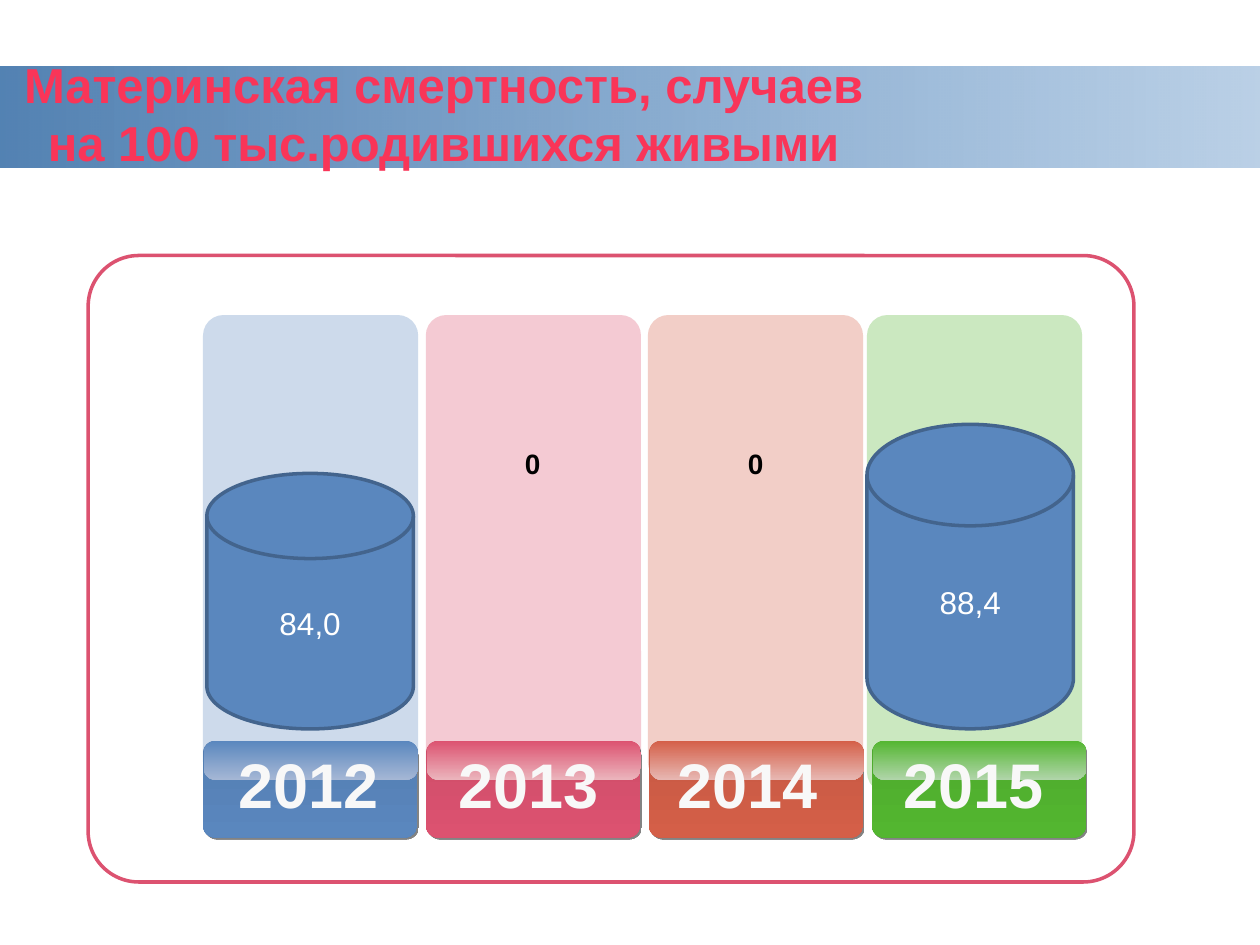
from lxml import etree
from pptx import Presentation
from pptx.dml.color import RGBColor
from pptx.enum import shapes, text
from pptx.oxml import ns
from pptx.util import Pt

KIND = shapes.MSO_SHAPE
FONT = "Arial"
BLUE = "5A87BE"
# year, value, bar colour, tab top colour, gloss end colour,
# bar left, bar height, year label width
YEARS = [
    ("2012", "84,0", BLUE, "547EB2", "A5B7D5", 116, 267, 119),
    ("2013", "0", "DC5270", "CE4D69", "EBB4BC", 243.3, 267, 115),
    ("2014", "0", "D45F48", "C65943", "E7B7B2", 370.2, 267, 111),
    ("2015", "88,4", "53B630", "4EAA2D", "B0D5A9", 495.4, 273, 114.5),
]
# value: offset from the bar's left, height
DISKS = {"84,0": (2.2, 146), "88,4": (0, 174)}


def rgb(code):
    return RGBColor.from_string(code)


def sub(node, tag, **attrs):
    return etree.SubElement(node, ns.qn(tag), **attrs)


def fade(shape, *alphas):
    """Set the opacity, in percent, of each fill colour in turn."""
    for clr, alpha in zip(shape._element.spPr.iter(ns.qn("a:srgbClr")), alphas):
        sub(clr, "a:alpha", val=str(alpha * 1000))


def cast(node, dist, alpha):
    shade = sub(node, "a:outerShdw", blurRad="0", dist=str(Pt(dist)),
                dir="2700000", algn="ctr", rotWithShape="0")
    clr = sub(shade, "a:srgbClr", val="080808")
    sub(clr, "a:alpha", val=str(alpha * 1000))


def block(host, kind, box, fill, line=None, adj=None):
    shape = host.shapes.add_shape(kind, *map(Pt, box))
    shape.shadow.inherit = False
    if adj:
        shape.adjustments[0] = adj
    shape.fill.solid()
    shape.fill.fore_color.rgb = rgb(fill)
    if line:
        shape.line.color.rgb = rgb(line)
        shape.line.width = Pt(2)
    else:
        shape.line.fill.background()
    return shape


def blend(shape, first, last, angle):
    shape.fill.gradient()
    shape.fill.gradient_angle = angle
    for stop, code in zip(shape.fill.gradient_stops, (first, last)):
        stop.color.rgb = rgb(code)


def write(shape, lines, size, color, bold=True):
    frame = shape.text_frame
    frame.word_wrap = True
    frame.vertical_anchor = text.MSO_ANCHOR.MIDDLE
    para = frame.paragraphs[0]
    para.alignment = text.PP_ALIGN.CENTER
    for i, line in enumerate(lines):
        if i:
            para.add_line_break()
        run = para.add_run()
        run.text = line
        run.font.size = Pt(size)
        run.font.bold = bold
        run.font.color.rgb = rgb(color)
        run.font.name = FONT
    return run


def label(slide, box, words, size, color):
    return write(slide.shapes.add_textbox(*map(Pt, box)), [words], size, color)


def header(slide, x, y, w, h):
    band = block(slide, KIND.RECTANGLE, (x, y, w, h), BLUE)
    blend(band, "00478F", "0052A4", 0)
    fade(band, 68, 27)
    slide.shapes._spTree.insert(2, band._element)
    title = slide.shapes.title
    title.left, title.top = Pt(x - 16.5), Pt(y - 18.7)
    title.width, title.height = Pt(540), Pt(90)
    write(title, ["Материнская смертность, случаев",
                  "на 100 тыс.родившихся живыми"], 28, "F93558")


def tab(slide, x, y, year, color, dark, pale, wide):
    group = slide.shapes.add_group_shape()
    base = block(group, KIND.ROUNDED_RECTANGLE, (x, y, 122.4, 55.4), color, adj=0.127)
    blend(base, dark, color, 270)
    cast(base._element.spPr.find(ns.qn("a:effectLst")), 1.4, 50)
    gloss = block(group, KIND.ROUNDED_RECTANGLE, (x + 0.4, y, 122.4, 22.3), color, adj=0.308)
    blend(gloss, color, pale, 270)
    run = label(slide, (x + 1, y - 0.7, wide, 50.4), year, 36, "F8F8F8")
    glow = etree.Element(ns.qn("a:effectLst"))
    cast(glow, 2, 100)
    run.font._element.find(ns.qn("a:solidFill")).addnext(glow)


def panel(slide, x, y, w, h):
    block(slide, KIND.ROUNDED_RECTANGLE, (x, y, w, h), "FFFFFF", "DC5270", 0.081)
    top = y + 34
    for i, (year, value, color, dark, pale, left, tall, wide) in enumerate(YEARS):
        bar = block(slide, KIND.ROUNDED_RECTANGLE, (left, top, 123, tall), color, adj=0.095)
        fade(bar, 30)
        slot = x + 65.6 + 127.4 * i
        tab(slide, slot, y + 277.3, year, color, dark, pale, wide)
        if value in DISKS:
            shift, high = DISKS[value]
            box = (left + shift, y + 270.5 - high, 118, high)
            disk = block(slide, KIND.FLOWCHART_MAGNETIC_DISK, box, BLUE, "43648D")
            write(disk, [value], 18, "FFFFFF", False)
        else:
            label(slide, (slot + 4.8, top + 71.3, 112.3, 26.6), value, 16, "000000")


def main():
    deck = Presentation()
    deck.slide_width, deck.slide_height = Pt(720), Pt(540)
    slide = deck.slides.add_slide(deck.slide_layouts[5])
    header(slide, 0, 38.2, 720, 57.6)
    panel(slide, 50.4, 146, 597.6, 358)
    deck.save("out.pptx")


if __name__ == "__main__":
    main()
